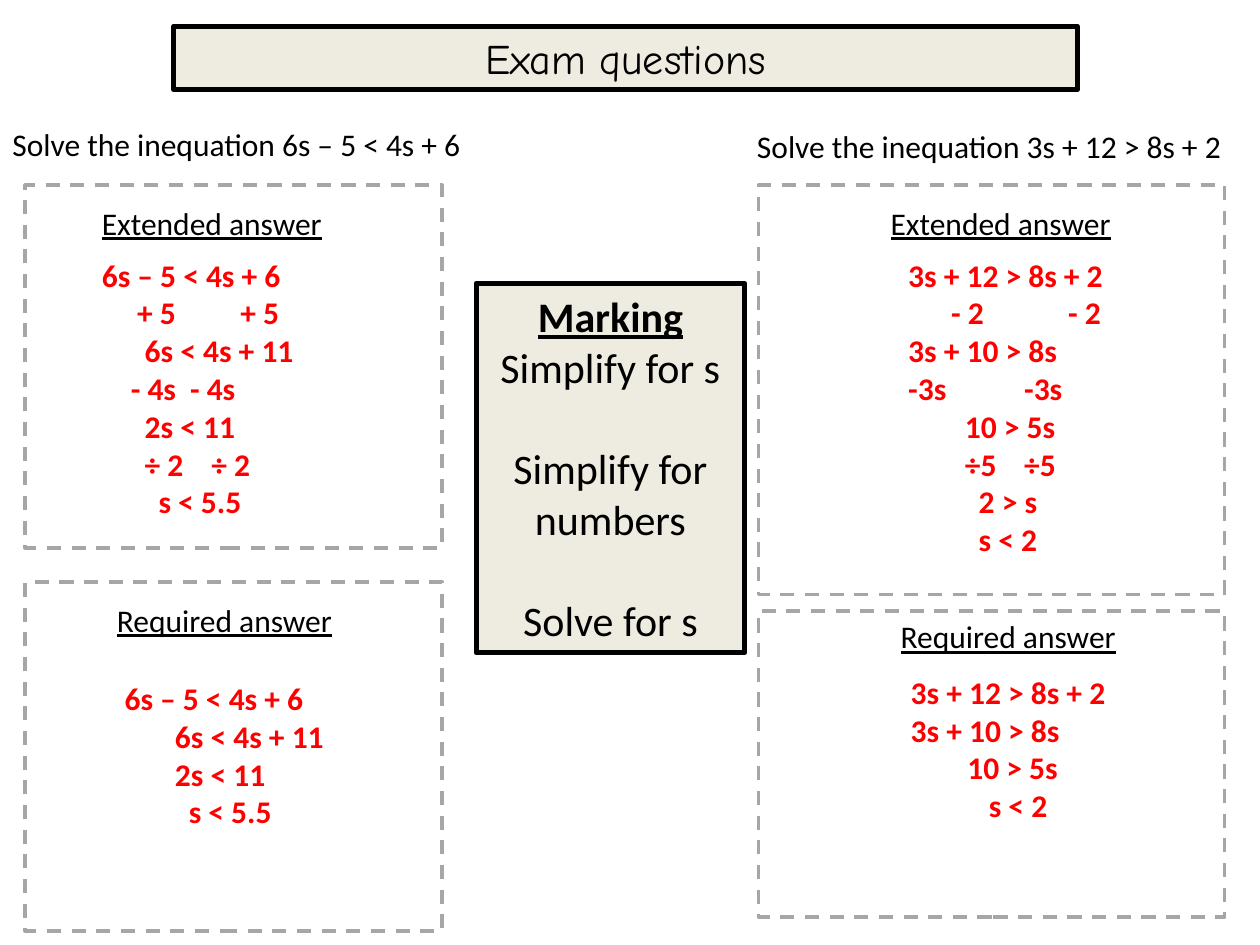
from dataclasses import dataclass

from lxml.etree import SubElement
from pptx import Presentation
from pptx.dml.color import RGBColor
from pptx.enum.dml import MSO_LINE_DASH_STYLE as Dash
from pptx.enum.shapes import MSO_AUTO_SHAPE_TYPE as Preset
from pptx.enum.text import MSO_ANCHOR as Anchor, PP_ALIGN as Align
from pptx.oxml.ns import qn
from pptx.util import Inches, Pt

COLOURS = {"ink": "000000", "answer": "FF0000", "panel": "EEECE1", "frame": "A6A6A6"}
COLUMNS, ROWS = 100, 75
SLIDE_WIDTH, SLIDE_HEIGHT = Inches(10), Inches(7.5)
COLUMN, ROW = SLIDE_WIDTH / COLUMNS, SLIDE_HEIGHT / ROWS

BODY = {"name": "Calibri", "size": Pt(18)}
TITLE = {"name": "Comic Neue", "size": Pt(24)}
HEADING = {**BODY, "underline": True}
WORKING = {**BODY, "bold": True}
STEP = {"name": "Calibri", "size": Pt(24)}
STEP_HEADING = {**STEP, "bold": True, "underline": True}
STEP_GAP = Pt(29.3)


@dataclass(frozen=True)
class Area:
    column: float
    row: float
    columns: float
    rows: float

    def box(self) -> tuple[int, ...]:
        return (round(self.column * COLUMN), round(self.row * ROW),
                round(self.columns * COLUMN), round(self.rows * ROW))


@dataclass(frozen=True)
class Part:
    column: float
    text: str


@dataclass(frozen=True)
class Answer:
    frame: Area
    heading: str
    heading_area: Area
    working_area: Area
    lines: tuple[tuple[Part, ...], ...]


@dataclass(frozen=True)
class Question:
    text: str
    area: Area
    answers: tuple[Answer, ...]


def line(*parts: tuple[float, str]) -> tuple[Part, ...]:
    return tuple(Part(*part) for part in parts)


QUESTIONS = (
    Question("Solve the inequation 6s – 5 < 4s + 6", Area(0, 9.4, 38.1, 4), (
        Answer(Area(2, 14.7, 33.1, 28.8), "Extended answer",
               Area(7.1, 15.7, 19.7, 7.1), Area(7.1, 19.8, 21.1, 22.2), (
                   line((0, "6s – 5 < 4s + 6")),
                   line((2.8, "+ 5"), (11, "+ 5")),
                   line((3.4, "6s < 4s + 11")),
                   line((2.3, "- 4s"), (7, "- 4s")),
                   line((3.4, "2s < 11")),
                   line((3.4, "÷ 2"), (8.7, "÷ 2")),
                   line((4.5, "s < 5.5")))),
        Answer(Area(2, 46.2, 33.1, 27.7), "Required answer",
               Area(8.3, 47.2, 19.3, 7.1), Area(8.9, 53.4, 17.9, 13.1), (
                   line((0, "6s – 5 < 4s + 6")),
                   line((4, "6s < 4s + 11")),
                   line((4, "2s < 11")),
                   line((5.1, "s < 5.5")))))),
    Question("Solve the inequation 3s + 12 > 8s + 2", Area(59.1, 9.6, 39.4, 4), (
        Answer(Area(60.2, 14.7, 37, 32.5), "Extended answer",
               Area(69.7, 15.7, 19.7, 7.1), Area(71.1, 19.8, 18.3, 25.2), (
                   line((0, "3s + 12 > 8s + 2")),
                   line((3.4, "- 2"), (12.7, "- 2")),
                   line((0, "3s + 10 > 8s")),
                   line((0, "-3s"), (9.2, "-3s")),
                   line((4.5, "10 > 5s")),
                   line((4.5, "÷5"), (9.2, "÷5")),
                   line((5.6, "2 > s")),
                   line((5.6, "s < 2")))),
        Answer(Area(60.2, 48.5, 37, 24.3), "Required answer",
               Area(70.5, 48.5, 25.8, 7.1), Area(71.3, 52.9, 17.7, 13.1), (
                   line((0, "3s + 12 > 8s + 2")),
                   line((0, "3s + 10 > 8s")),
                   line((4.5, "10 > 5s")),
                   line((6.2, "s < 2")))))),
)


def colour(role: str) -> RGBColor:
    return RGBColor.from_string(COLOURS[role])


def write(paragraph, text: str, style: dict, role: str = "ink") -> None:
    run = paragraph.add_run()
    run.text = text
    for attribute, value in style.items():
        setattr(run.font, attribute, value)
    run.font.color.rgb = colour(role)


def next_paragraph(text_frame, index: int):
    return text_frame.add_paragraph() if index else text_frame.paragraphs[0]


def draw_panel(slide, area: Area):
    panel = slide.shapes.add_shape(Preset.RECTANGLE, *area.box())
    panel.shadow.inherit = False
    panel.fill.solid()
    panel.fill.fore_color.rgb = colour("panel")
    panel.line.color.rgb = colour("ink")
    panel.line.width = Pt(3)
    panel.text_frame.word_wrap = True
    panel.text_frame.vertical_anchor = Anchor.MIDDLE
    return panel.text_frame


def draw_frame(slide, area: Area) -> None:
    frame = slide.shapes.add_shape(Preset.RECTANGLE, *area.box())
    frame.shadow.inherit = False
    frame.fill.background()
    frame.line.color.rgb = colour("frame")
    frame.line.width = Pt(2)
    frame.line.dash_style = Dash.DASH


def draw_label(slide, area: Area, text: str, style: dict) -> None:
    text_frame = slide.shapes.add_textbox(*area.box()).text_frame
    text_frame.word_wrap = False
    write(text_frame.paragraphs[0], text, style)


def draw_working(slide, answer: Answer) -> None:
    text_frame = slide.shapes.add_textbox(*answer.working_area.box()).text_frame
    text_frame.word_wrap = True
    for index, parts in enumerate(answer.lines):
        paragraph = next_paragraph(text_frame, index)
        stops = [part.column for part in parts if part.column]
        if stops:
            tab_list = SubElement(paragraph._p.get_or_add_pPr(), qn("a:tabLst"))
            for stop in stops:
                SubElement(tab_list, qn("a:tab"), pos=str(round(stop * COLUMN)), algn="l")
        text = "".join(("\t" if part.column else "") + part.text for part in parts)
        write(paragraph, text, WORKING, "answer")


def draw_marking(slide) -> None:
    text_frame = draw_panel(slide, Area(37.8, 22.5, 21.3, 29.3))
    steps = (("Marking", STEP_HEADING, 0), ("Simplify for s", STEP, 0),
             ("Simplify for numbers", STEP, STEP_GAP), ("Solve for s", STEP, STEP_GAP))
    for index, (text, style, gap) in enumerate(steps):
        paragraph = next_paragraph(text_frame, index)
        paragraph.alignment = Align.CENTER
        paragraph.space_before = gap
        write(paragraph, text, style)


def main() -> None:
    deck = Presentation()
    deck.slide_width, deck.slide_height = SLIDE_WIDTH, SLIDE_HEIGHT
    slide = deck.slides.add_slide(deck.slide_layouts[6])
    title = draw_panel(slide, Area(13.8, 2.1, 71.7, 5)).paragraphs[0]
    title.alignment = Align.CENTER
    write(title, "Exam questions", TITLE)
    draw_marking(slide)
    for question in QUESTIONS:
        draw_label(slide, question.area, question.text, BODY)
        for answer in question.answers:
            draw_frame(slide, answer.frame)
            draw_label(slide, answer.heading_area, answer.heading, HEADING)
            draw_working(slide, answer)
    deck.save("out.pptx")


if __name__ == "__main__":
    main()
